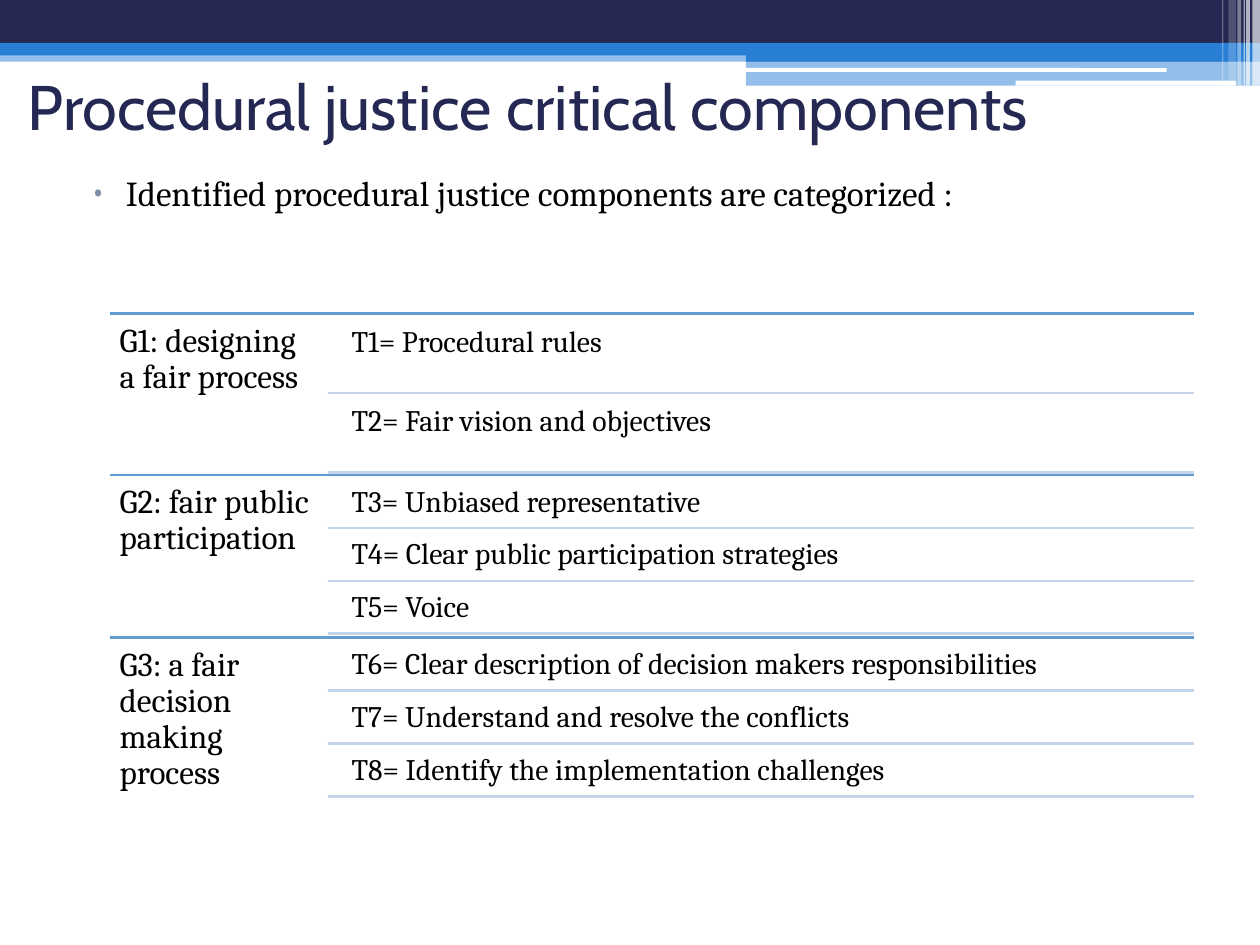
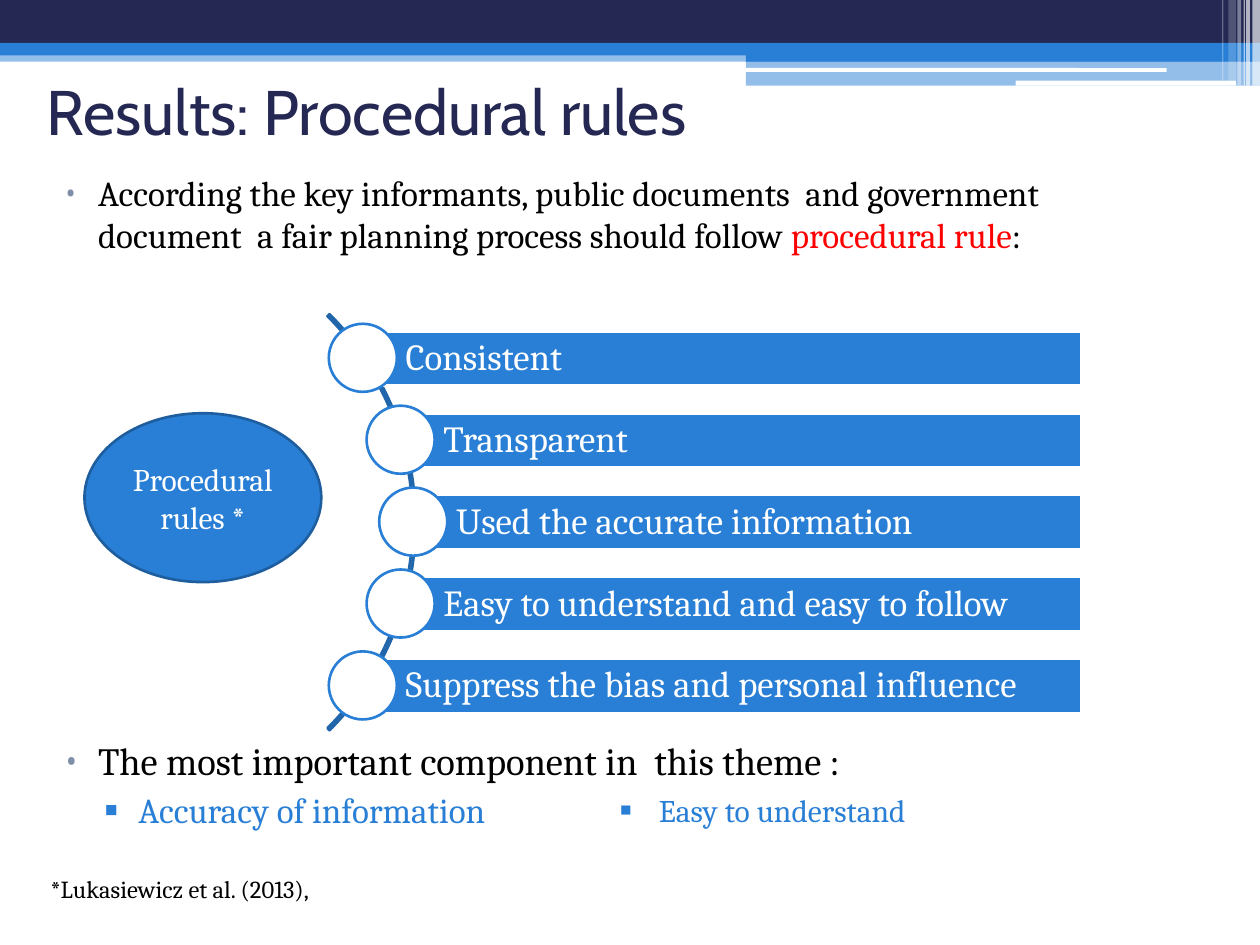
from math import sqrt

from lxml.etree import SubElement
from pptx import Presentation
from pptx.dml.color import RGBColor
from pptx.enum.shapes import MSO_CONNECTOR, MSO_SHAPE
from pptx.enum.text import MSO_ANCHOR, PP_ALIGN
from pptx.oxml.ns import qn
from pptx.util import Pt

PX = 9144  # 100 px to the inch
COLORS = {
    "navy": "242852", "blue": "297FD5", "white": "FFFFFF", "black": "000000",
    "red": "FF0000", "slate": "7F8FA9", "rule": "629DD1", "pale": "C5D5E9",
    "arc": "2166AB", "edge": "1E5E9E",
}
RECT, ROUND, OVAL = MSO_SHAPE.RECTANGLE, MSO_SHAPE.ROUNDED_RECTANGLE, MSO_SHAPE.OVAL
# kind, left, top, width, height, colour, opacity in percent
BANDS = [
    (RECT, 0, 40, 1000, 9, "blue", 50),
    (RECT, 0, 0, 1000, 34, "navy", 100),
    (RECT, 0, 34, 1000, 10, "blue", 100),
    (RECT, 592, 39, 408, 10, "blue", 100),
    (RECT, 592, 48, 408, 20, "blue", 50),
    (ROUND, 591, 54, 335, 3, "white", 100),
    (ROUND, 806, 64, 175, 4, "white", 100),
    (RECT, 994, 0, 6, 68, "white", 65),
    (RECT, 989, 0, 3, 68, "white", 65),
    (RECT, 987, 0, 1, 68, "white", 60),
    (RECT, 982, 0, 3, 68, "white", 40),
    (RECT, 975, 0, 6, 64, "white", 20),
    (RECT, 970, 0, 1, 64, "white", 30),
]
GROUPS = [
    ("G1: designing  a fair process",
     ["T1= Procedural rules", "T2= Fair vision and objectives"]),
    ("G2: fair public participation",
     ["T3= Unbiased representative", "T4= Clear public participation strategies",
      "T5= Voice"]),
    ("G3: a fair decision making process",
     ["T6= Clear description of decision makers responsibilities",
      "T7= Understand and resolve the conflicts",
      "T8= Identify the implementation challenges"]),
]
RULES = ["Consistent", "Transparent", "Used the accurate information",
         "Easy to understand and easy to follow",
         "Suppress the bias and personal influence"]


def color(name):
    return RGBColor.from_string(COLORS[name])


def write(frame, text, *, size=20, tint="black", font="Cambria", align=PP_ALIGN.LEFT,
          before=0, lead=None, bullet=None, dot="slate", indent=(0, 0), more=False):
    """Write one paragraph; text is a string or a list of (string, colour) runs.

    indent is the left margin and first-line offset; more adds to earlier text.
    """
    para = frame.add_paragraph() if more else frame.paragraphs[0]
    para.alignment = align
    para.space_before = Pt(before)
    if lead:
        para.line_spacing = lead
    if bullet:
        props = para._p.get_or_add_pPr()
        props.set("marL", str(indent[0] * PX))
        props.set("indent", str(indent[1] * PX))
        paint = SubElement(props, qn("a:buClr"))
        SubElement(paint, qn("a:srgbClr"), val=COLORS[dot])
        SubElement(props, qn("a:buFont"), typeface=font)
        SubElement(props, qn("a:buChar"), char=bullet)
    for part, hue in ([(text, tint)] if isinstance(text, str) else text):
        run = para.add_run()
        run.text = part
        run.font.size = Pt(size)
        run.font.name = font
        run.font.color.rgb = color(hue)


class Deck:
    def __init__(self):
        self.show = Presentation()
        self.show.slide_width, self.show.slide_height = 1000 * PX, 750 * PX
        self.slide = None

    def page(self, title, *box):
        """Start a slide with the shared bands and a title in the given box."""
        self.slide = self.show.slides.add_slide(self.show.slide_layouts[6])
        for kind, x, y, w, h, fill, alpha in BANDS:
            self.shape(kind, x, y, w, h, fill=fill, alpha=alpha)
        write(self.text(*box, middle=True), title, size=36, tint="navy", font="Cabin")

    def frame(self, shape, pads, middle):
        frame = shape.text_frame
        frame.word_wrap = True
        frame.vertical_anchor = MSO_ANCHOR.MIDDLE if middle else MSO_ANCHOR.TOP
        (frame.margin_left, frame.margin_top,
         frame.margin_right, frame.margin_bottom) = [pad * PX for pad in pads]
        return frame

    def text(self, x, y, w, h, pads=(10, 5, 10, 5), middle=False):
        box = self.slide.shapes.add_textbox(x * PX, y * PX, w * PX, h * PX)
        return self.frame(box, pads, middle)

    def shape(self, kind, x, y, w, h, *, fill=None, line=None, alpha=100, bends=(),
              pads=(10, 5, 10, 5)):
        """Draw a preset shape and return its text frame."""
        shape = self.slide.shapes.add_shape(kind, x * PX, y * PX, w * PX, h * PX)
        shape.shadow.inherit = False
        for i, bend in enumerate(bends):
            shape.adjustments[i] = bend
        if fill:
            shape.fill.solid()
            shape.fill.fore_color.rgb = color(fill)
            if alpha < 100:
                paint = shape._element.spPr.find(qn("a:solidFill"))[0]
                SubElement(paint, qn("a:alpha"), val=str(alpha * 1000))
        else:
            shape.fill.background()
        if line:
            shape.line.color.rgb = color(line)
            shape.line.width = Pt(1.5)
        else:
            shape.line.fill.background()
        return self.frame(shape, pads, True)

    def rule(self, left, right, y, tint):
        line = self.slide.shapes.add_connector(
            MSO_CONNECTOR.STRAIGHT, left * PX, y * PX, right * PX, y * PX)
        line.line.color.rgb = color(tint)
        line.line.width = Pt(1.5)
        SubElement(line._element.spPr, qn("a:effectLst"))


def draw_groups(deck):
    deck.page("Procedural justice critical components", 12, 25, 900, 117)
    write(deck.text(50, 131, 900, 60),
          "Identified procedural justice components are categorized :",
          before=3, bullet="•", indent=(40, -28))
    left, right = 87, 948
    for i, (group, themes) in enumerate(GROUPS):
        top = 249 + round(128.5 * i)
        deck.rule(left, right, top, "rule")
        write(deck.text(left, top, 172, 128, pads=(8,) * 4), group, size=19, lead=0.9)
        step = 126 // len(themes)
        gap = step // 20
        for j, theme in enumerate(themes):
            y = top + j * step
            write(deck.text(272, y + gap, 676, step - gap, pads=(7,) * 4),
                  theme, size=17, lead=0.9)
            deck.rule(260, right, y + step, "pale")


def draw_rules(deck):
    deck.page("Results: Procedural rules", 27, 52, 900, 71)
    write(deck.text(28, 131, 916, 90),
          [("According the key informants, public documents  and government "
            "document  a fair planning process should follow ", "black"),
           ("procedural rule", "red"), (":", "black")],
          before=3, bullet="•", indent=(40, -28))
    body = deck.text(28, 580, 916, 94)
    write(body, "The most important component in  this theme :",
          size=22, before=3, bullet="•", indent=(40, -28))
    write(body, "Accuracy of information", tint="blue", before=3,
          bullet="▪", dot="blue", indent=(72, -27), more=True)
    write(deck.shape(ROUND, 27, 674, 906, 63, fill="white"),
          "*Lukasiewicz et al. (2013),", size=14)

    deck.shape(MSO_SHAPE.BLOCK_ARC, -137, 181, 467, 467, line="arc",
               bends=(189, 27, 0.005))
    pitch, tall, disc, end = 65, 43, 54, 858
    for i, rule in enumerate(RULES):
        # Each disc is centred on the arc
        x = round(94 + sqrt(233.5 ** 2 - (pitch * (i - 2)) ** 2))
        y = 263 + pitch * i
        bar = deck.shape(RECT, x, y, end - x, tall, fill="blue", line="white",
                         pads=(34, 6, 6, 6))
        write(bar, rule, size=21, tint="white", lead=0.9)
        deck.shape(OVAL, x - disc // 2, y - 6, disc, disc, fill="white", line="blue")

    write(deck.shape(OVAL, 67, 328, 188, 134, fill="blue", line="edge"),
          "Procedural rules *", size=18, tint="white", align=PP_ALIGN.CENTER)
    write(deck.text(482, 611, 362, 63, middle=True), "Easy to understand",
          size=18, tint="blue", bullet="▪", dot="blue", indent=(31, -31))


def main():
    deck = Deck()
    draw_groups(deck)
    draw_rules(deck)
    deck.show.save("out.pptx")


if __name__ == "__main__":
    main()
